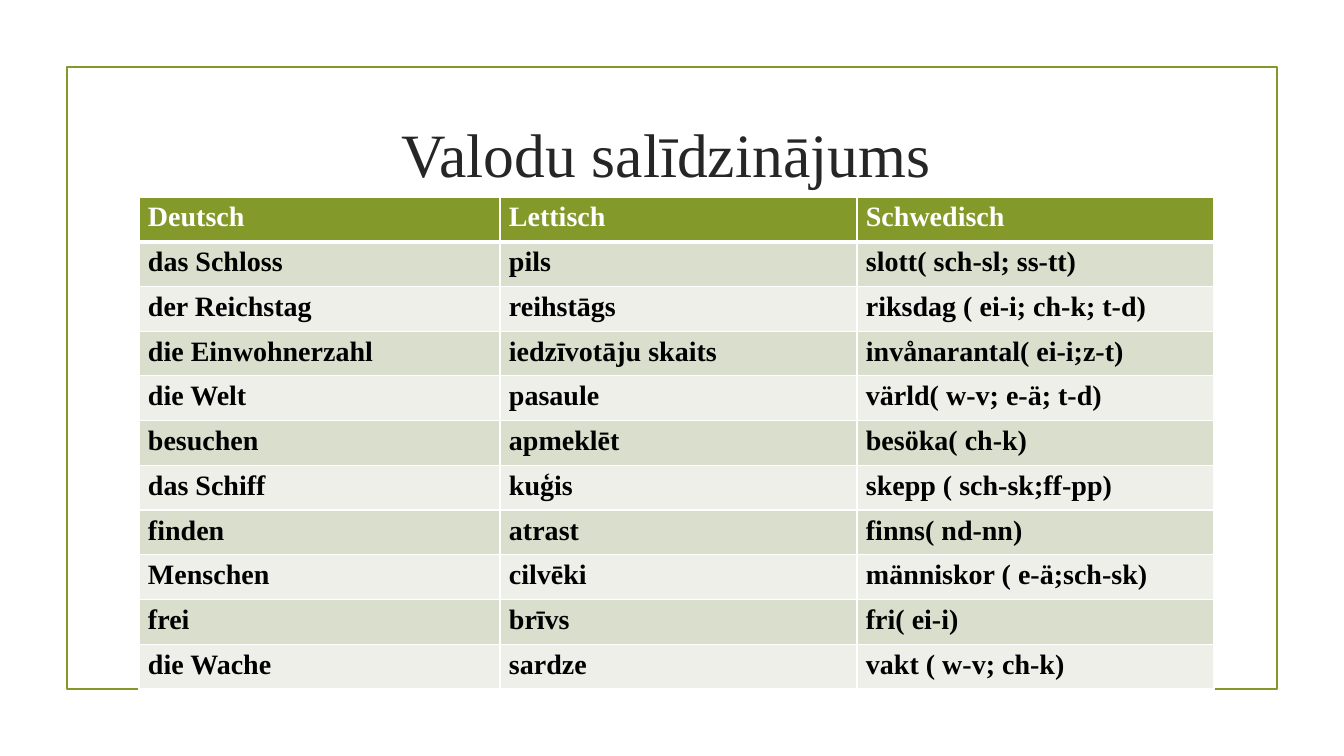
from lxml.etree import SubElement
from pptx import Presentation
from pptx.dml.color import RGBColor
from pptx.enum.shapes import MSO_SHAPE as Shape
from pptx.enum.text import MSO_ANCHOR as Anchor, MSO_AUTO_SIZE as AutoSize, PP_ALIGN as Align
from pptx.oxml.ns import qn
from pptx.util import Pt

EMU_PER_PX = 914400 / 100.8
SLIDE_SIZE = (1344, 756)
FONT = "Times New Roman"
GREEN, WHITE, INK, BLACK = "83992A", "FFFFFF", "262626", "000000"
BANDS = ("D9DECD", "EDEFE8")
COLUMN_WIDTHS = (361, 357, 357)
WORDS = [
    ("Deutsch", "Lettisch", "Schwedisch"),
    ("das Schloss", "pils", "slott( sch-sl; ss-tt)"),
    ("der Reichstag", "reihstāgs", "riksdag ( ei-i; ch-k; t-d)"),
    ("die Einwohnerzahl", "iedzīvotāju skaits", "invånarantal( ei-i;z-t)"),
    ("die Welt", "pasaule", "värld( w-v; e-ä; t-d)"),
    ("besuchen", "apmeklēt", "besöka( ch-k)"),
    ("das Schiff", "kuģis", "skepp ( sch-sk;ff-pp)"),
    ("finden", "atrast", "finns( nd-nn)"),
    ("Menschen", "cilvēki", "människor ( e-ä;sch-sk)"),
    ("frei", "brīvs", "fri( ei-i)"),
    ("die Wache", "sardze", "vakt ( w-v; ch-k)"),
]


def px(length):
    """Turn pixels into EMU."""
    return round(length * EMU_PER_PX)


def paint(target, color):
    """Give a fill, line fill or font its solid colour from a hex string."""
    if hasattr(target, "solid"):
        target.solid()
        target.fore_color.rgb = RGBColor.from_string(color)
    else:
        target.color.rgb = RGBColor.from_string(color)


def write(frame, text, size=20, color=BLACK, bold=False, align=Align.LEFT):
    """Write one formatted paragraph into a text frame."""
    paragraph = frame.paragraphs[0]
    paragraph.alignment = align
    run = paragraph.add_run()
    run.text = text
    run.font.name, run.font.size, run.font.bold = FONT, Pt(size), bold
    paint(run.font, color)


def add_frame(slide, box):
    """Outline the slide with a thin green frame."""
    outline = slide.shapes.add_shape(Shape.RECTANGLE, *map(px, box))
    outline.shadow.inherit = False
    outline.fill.background()
    outline.line.width = Pt(1.25)
    paint(outline.line.fill, GREEN)


def add_heading(slide, box, text):
    """Move the title placeholder into the box and write the heading."""
    heading = slide.shapes.title
    heading.left, heading.top, heading.width, heading.height = map(px, box)
    frame = heading.text_frame
    frame.word_wrap = True
    frame.auto_size = AutoSize.NONE
    frame.vertical_anchor = Anchor.MIDDLE
    write(frame, text, size=44, color=INK, align=Align.CENTER)


def add_borders(cell, widths):
    """Draw white borders, widths in points for left, right, top and bottom."""
    properties = cell._tc.get_or_add_tcPr()
    for side, width in zip("LRTB", widths):
        border = SubElement(properties, qn(f"a:ln{side}"), w=str(Pt(width)))
        fill = SubElement(border, qn("a:solidFill"))
        SubElement(fill, qn("a:srgbClr"), val=WHITE)


def add_word_table(slide, box, rows):
    """Fill the box with a banded vocabulary table under a green header."""
    table = slide.shapes.add_table(len(rows), len(rows[0]), *map(px, box)).table
    for column, width in zip(table.columns, COLUMN_WIDTHS):
        column.width = px(width)
    for r, words in enumerate(rows):
        header = r == 0
        for c, word in enumerate(words):
            cell = table.cell(r, c)
            cell.margin_left = cell.margin_right = px(9)
            cell.margin_top = cell.margin_bottom = px(5)
            add_borders(cell, (1, 1, 3 if r == 1 else 1, 3 if header else 1))
            paint(cell.fill, GREEN if header else BANDS[(r - 1) % 2])
            write(cell.text_frame, word, color=WHITE if header else BLACK, bold=True)


def main():
    """Build the language comparison slide."""
    deck = Presentation()
    deck.slide_width, deck.slide_height = map(px, SLIDE_SIZE)
    slide = deck.slides.add_slide(deck.slide_layouts[5])
    paint(slide.background.fill, WHITE)
    add_frame(slide, (67, 67, 1210, 622))
    add_heading(slide, (143, 108, 1047, 89), "Valodu salīdzinājums")
    add_word_table(slide, (139, 197, sum(COLUMN_WIDTHS), 492), WORDS)
    deck.save("out.pptx")


if __name__ == "__main__":
    main()
